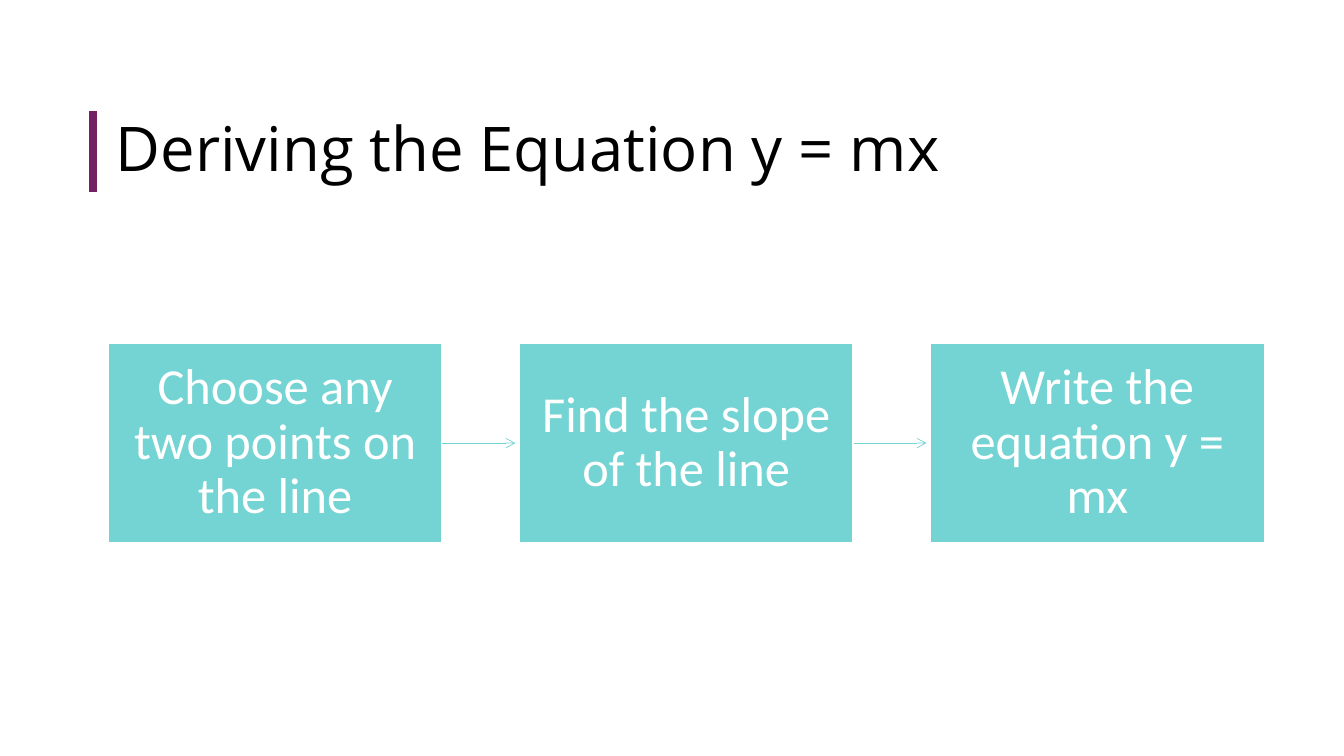
import pptx
import pptx.dml.color
import pptx.enum.shapes
import pptx.enum.text
import pptx.oxml.ns
import pptx.util
from lxml import etree
from pptx.util import Cm, Pt

COLOURS = {"purple": "722262", "teal": "74D4D3", "white": "FFFFFF", "black": "000000"}
STEPS = [
    "Choose any two points on the line",
    "Find the slope of the line",
    "Write the equation y = mx",
]
LEFT, TOP, WIDTH, HEIGHT, PITCH = 2.72, 8.64, 8.43, 5.05, 10.36


def rgb(name):
    return pptx.dml.color.RGBColor.from_string(COLOURS[name])


def add_line(page, start, end, colour, weight):
    line = page.shapes.add_connector(
        pptx.enum.shapes.MSO_CONNECTOR.STRAIGHT, *map(Cm, start + end))
    line.line.color.rgb = rgb(colour)
    line.line.width = Pt(weight)
    etree.SubElement(line._element.spPr, pptx.oxml.ns.qn("a:effectLst"))
    return line


deck = pptx.Presentation()
deck.slide_width, deck.slide_height = Cm(33.87), Cm(19.05)
page = deck.slides.add_slide(deck.slide_layouts[6])

# Title with its accent bar
add_line(page, (2.34, 2.8), (2.34, 4.83), "purple", 6)
title = page.shapes.add_textbox(Cm(2.67), Cm(2.8), Cm(29.2), Cm(2.03))
title.text_frame.word_wrap = True
title.text_frame.vertical_anchor = pptx.enum.text.MSO_ANCHOR.MIDDLE
para = title.text_frame.paragraphs[0]
para.text = "Deriving the Equation y = mx"
para.line_spacing = 0.9
para.font.name = "Open Sans"
para.font.size = Pt(44)
para.font.color.rgb = rgb("black")

# Steps, each joined to the next by an arrow
for index, step in enumerate(STEPS):
    left = LEFT + index * PITCH
    box = page.shapes.add_shape(
        pptx.enum.shapes.MSO_SHAPE.RECTANGLE, Cm(left), Cm(TOP), Cm(WIDTH), Cm(HEIGHT))
    box.shadow.inherit = False
    box.fill.solid()
    box.fill.fore_color.rgb = rgb("teal")
    box.line.color.rgb = rgb("white")
    box.line.width = Pt(1.5)

    frame = box.text_frame
    frame.word_wrap = True
    frame.vertical_anchor = pptx.enum.text.MSO_ANCHOR.MIDDLE
    frame.margin_left = frame.margin_right = Cm(0.41)
    frame.margin_top = frame.margin_bottom = Cm(0.43)
    para = frame.paragraphs[0]
    para.text = step
    para.alignment = pptx.enum.text.PP_ALIGN.CENTER
    para.line_spacing = 0.9
    para.font.name = "Calibri"
    para.font.size = Pt(36)
    para.font.color.rgb = rgb("white")

    if index < len(STEPS) - 1:
        start, middle = left + WIDTH, TOP + HEIGHT / 2
        arrow = add_line(page, (start, middle), (start + 1.84, middle), "teal", 0.5)
        etree.SubElement(
            arrow.line._get_or_add_ln(), pptx.oxml.ns.qn("a:tailEnd"), type="arrow")

deck.save("out.pptx")
